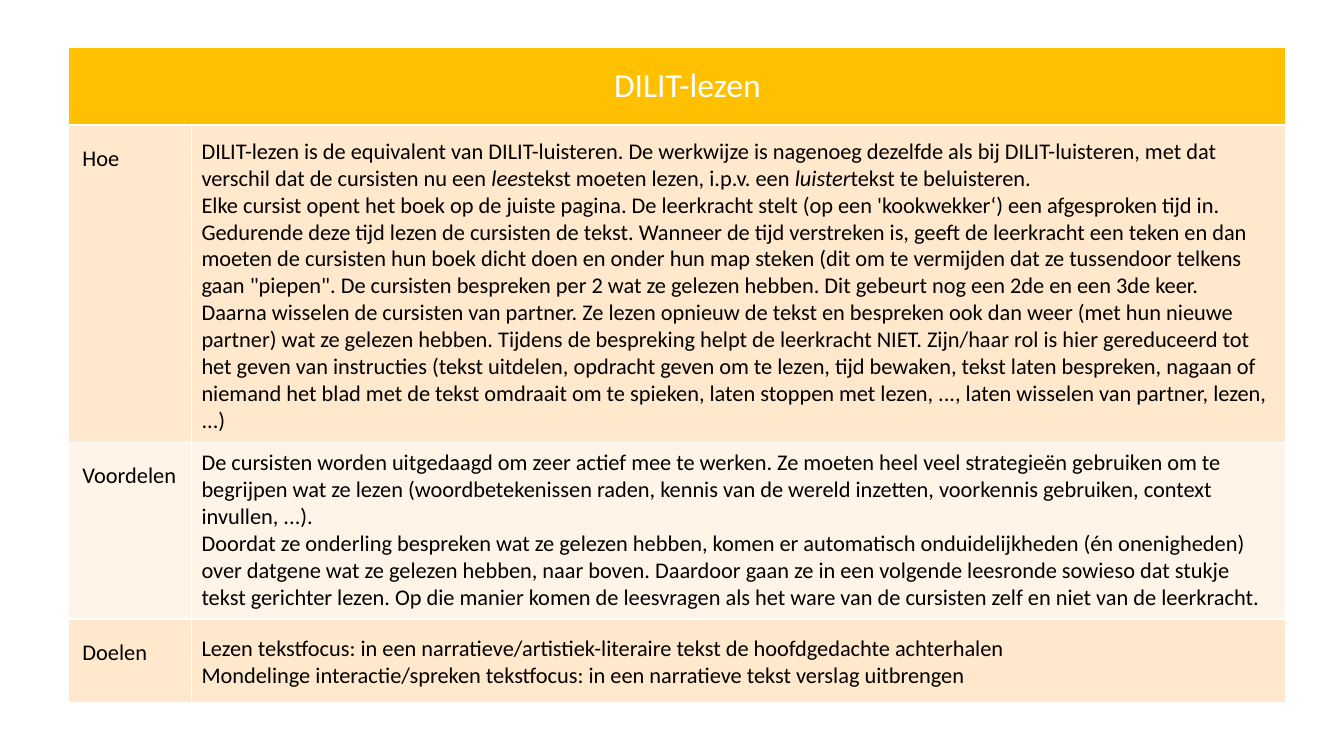
import pptx
import pptx.dml.color
import pptx.enum.text
import pptx.util
from pptx.util import Cm


def color(hex_string):
    return pptx.dml.color.RGBColor.from_string(hex_string)


def style_font(para, size, hex_string):
    para.font.name = "Calibri"
    para.font.size = pptx.util.Pt(size)
    para.font.bold = False
    para.font.color.rgb = color(hex_string)


column_widths = [3.1, 27.58]
header_height = 1.96
sections = [
    ("Hoe", 8, "FFE8CC", 3.33, 7.77, [
        "DILIT-lezen is de equivalent van DILIT-luisteren. De werkwijze is nagenoeg dezelfde als bij "
        "DILIT-luisteren, met dat verschil dat de cursisten nu een *lees*tekst moeten lezen, i.p.v. een "
        "*luister*tekst te beluisteren.",
        "Elke cursist opent het boek op de juiste pagina. De leerkracht stelt (op een 'kookwekker‘) een "
        "afgesproken tijd in. Gedurende deze tijd lezen de cursisten de tekst. Wanneer de tijd verstreken is, "
        "geeft de leerkracht een teken en dan moeten de cursisten hun boek dicht doen en onder hun map steken "
        "(dit om te vermijden dat ze tussendoor telkens gaan \"piepen\". De cursisten bespreken per 2 wat ze "
        "gelezen hebben. Dit gebeurt nog een 2de en een 3de keer.",
        "Daarna wisselen de cursisten van partner. Ze lezen opnieuw de tekst en bespreken ook dan weer (met hun "
        "nieuwe partner) wat ze gelezen hebben. Tijdens de bespreking helpt de leerkracht NIET. Zijn/haar rol is "
        "hier gereduceerd tot het geven van instructies (tekst uitdelen, opdracht geven om te lezen, tijd "
        "bewaken, tekst laten bespreken, nagaan of niemand het blad met de tekst omdraait om te spieken, laten "
        "stoppen met lezen, ..., laten wisselen van partner, lezen, ...)",
    ]),
    ("Voordelen", 4.45, "FFF4E7", 11.18, 4.37, [
        "De cursisten worden uitgedaagd om zeer actief mee te werken. Ze moeten heel veel strategieën gebruiken "
        "om te begrijpen wat ze lezen (woordbetekenissen raden, kennis van de wereld inzetten, voorkennis "
        "gebruiken, context invullen, ...).",
        "Doordat ze onderling bespreken wat ze gelezen hebben, komen er automatisch onduidelijkheden (én "
        "onenigheden) over datgene wat ze gelezen hebben, naar boven. Daardoor gaan ze in een volgende leesronde "
        "sowieso dat stukje tekst gerichter lezen. Op die manier komen de leesvragen als het ware van de "
        "cursisten zelf en niet van de leerkracht.",
    ]),
    ("Doelen", 2.11, "FFE8CC", 15.85, 1.63, [
        "Lezen tekstfocus: in een narratieve/artistiek-literaire tekst de hoofdgedachte achterhalen",
        "Mondelinge interactie/spreken tekstfocus: in een narratieve tekst verslag uitbrengen",
    ]),
]

deck = pptx.Presentation()
deck.slide_width = Cm(33.87)
deck.slide_height = Cm(19.05)
page = deck.slides.add_slide(deck.slide_layouts[6])

table_height = header_height + sum(section[1] for section in sections)
table = page.shapes.add_table(
    len(sections) + 1, 2, Cm(1.73), Cm(1.19), Cm(sum(column_widths)), Cm(table_height)
).table
for column, width in zip(table.columns, column_widths):
    column.width = Cm(width)

table.rows[0].height = Cm(header_height)
header = table.cell(0, 0)
header.merge(table.cell(0, 1))
header.fill.solid()
header.fill.fore_color.rgb = color("FFC000")
header.vertical_anchor = pptx.enum.text.MSO_ANCHOR.MIDDLE
header.margin_left = Cm(0.76)
header.text = "DILIT-lezen"
para = header.text_frame.paragraphs[0]
para.alignment = pptx.enum.text.PP_ALIGN.CENTER
style_font(para, 24, "FFFFFF")

for row, (label, row_height, fill, top, height, texts) in enumerate(sections, 1):
    table.rows[row].height = Cm(row_height)
    for cell in table.rows[row].cells:
        cell.fill.solid()
        cell.fill.fore_color.rgb = color(fill)

    label_cell = table.cell(row, 0)
    label_cell.margin_left = Cm(0.35)
    label_cell.margin_top = Cm(0.66)
    label_cell.text = label
    para = label_cell.text_frame.paragraphs[0]
    para.line_spacing = pptx.util.Pt(15)
    style_font(para, 16, "000000")

    box = page.shapes.add_textbox(Cm(4.83), Cm(top), Cm(27.36), Cm(height))
    frame = box.text_frame
    frame.word_wrap = True
    for index, text in enumerate(texts):
        para = frame.add_paragraph() if index else frame.paragraphs[0]
        style_font(para, 16, "000000")
        for position, part in enumerate(text.split("*")):
            span = para.add_run()
            span.text = part
            if position % 2:
                span.font.italic = True

deck.save("out.pptx")
